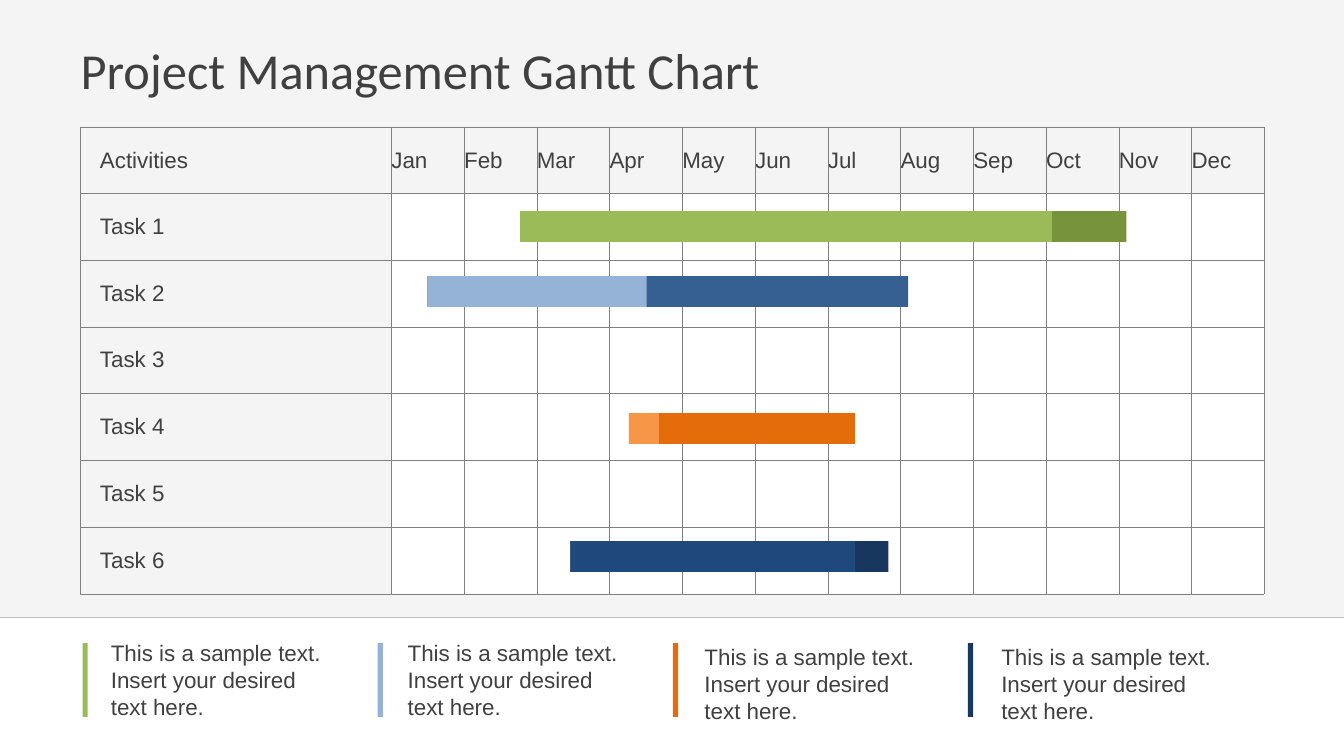
from lxml import etree
from pptx import Presentation, oxml
from pptx import util as u
from pptx.dml import color
from pptx.enum import shapes, text
from pptx.oxml import ns

INK = {
    "text": "404040", "grid": "808080", "rule": "BFBFBF",
    "panel": "D9D9D9", "white": "FFFFFF",
    "lime": "9BBB59", "olive": "77933C",
    "sky": "95B3D7", "blue": "376092",
    "peach": "F79646", "orange": "E46C0A",
    "royal": "1F497D", "navy": "17375E",
}
WIDE, HIGH = 960, 540
MONTHS = "Jan Feb Mar Apr May Jun Jul Aug Sep Oct Nov Dec".split()
TASKS = [f"Task {n}" for n in range(1, 7)]
NOTE = "This is a sample text. Insert your desired text here."


class Board:
    """Draws on one slide in one style; all lengths are in points."""

    def __init__(self, slide):
        self.slide = slide
        self.size, self.face = 16, "Arial"

    def tint(self, name):
        return color.RGBColor.from_string(INK[name])

    def font(self, para, size=None, face=None):
        font = para.font
        font.size, font.name = u.Pt(size or self.size), face or self.face
        font.color.rgb = self.tint("text")

    def inset(self, item, left=0, top=0, right=0, low=0):
        item.margin_left, item.margin_top = u.Pt(left), u.Pt(top)
        item.margin_right, item.margin_bottom = u.Pt(right), u.Pt(low)

    def title(self, words, *box):
        head = self.slide.shapes.title
        head.left, head.top, head.width, head.height = map(u.Pt, box)
        frame = head.text_frame
        frame.text = words
        frame.vertical_anchor = text.MSO_ANCHOR.MIDDLE
        self.inset(frame, 9.6, 4.8, 9.6, 4.8)
        frame.paragraphs[0].alignment = text.PP_ALIGN.LEFT
        self.font(frame.paragraphs[0], 36, "Calibri")

    def rect(self, name, *box, kind=shapes.MSO_SHAPE.RECTANGLE, group=None):
        home = (group or self.slide).shapes
        shape = home.add_shape(kind, *map(u.Pt, box))
        shape.shadow.inherit = False
        shape.fill.solid()
        shape.fill.fore_color.rgb = self.tint(name)
        shape.line.fill.background()
        return shape

    def panel(self, name, alpha, *box):
        shape = self.rect(name, *box)
        tone = shape.element.spPr.find(".//" + ns.qn("a:srgbClr"))
        etree.SubElement(tone, ns.qn("a:alpha"), val=str(alpha * 1000))
        self.slide.shapes.title.element.addprevious(shape.element)

    def rule(self, name, *ends):
        line = self.slide.shapes.add_connector(
            shapes.MSO_CONNECTOR.STRAIGHT, *map(u.Pt, ends))
        line.line.color.rgb = self.tint(name)
        line.line.width = u.Pt(0.25)
        etree.SubElement(line.element.spPr, ns.qn("a:effectLst"))

    def edge(self, cell):
        props = cell._tc.get_or_add_tcPr()
        for at, side in enumerate(("lnL", "lnR", "lnT", "lnB")):
            props.insert(at, oxml.parse_xml(
                f'<a:{side} {ns.nsdecls("a")} w="3175"><a:solidFill>'
                f'<a:srgbClr val="{INK["grid"]}"/></a:solidFill></a:{side}>'))

    def table(self, rows, left, top, wides, highs):
        grid = self.slide.shapes.add_table(
            len(highs), len(wides), u.Pt(left), u.Pt(top),
            u.Pt(sum(wides)), u.Pt(sum(highs))).table
        grid.first_row = grid.horz_banding = False
        for col, wide in zip(grid.columns, wides):
            col.width = u.Pt(wide)
        for y, (row, high) in enumerate(zip(rows, highs)):
            grid.rows[y].height = u.Pt(high)
            for x, words in enumerate(row):
                cell = grid.cell(y, x)
                cell.text = words
                cell.vertical_anchor = text.MSO_ANCHOR.MIDDLE
                self.inset(cell, *((0,) * 4 if x else (14.4, 3.6, 7.2, 3.6)))
                self.font(cell.text_frame.paragraphs[0])
                if x and y:
                    cell.fill.solid()
                    cell.fill.fore_color.rgb = self.tint("white")
                else:
                    cell.fill.background()
                self.edge(cell)

    def bar(self, left, top, full, part, back, front):
        group = self.slide.shapes.add_group_shape()
        for wide, name in ((full, back), (part, front)):
            shape = self.rect(name, left, top, wide, 21.9, group=group,
                              kind=shapes.MSO_SHAPE.ROUNDED_RECTANGLE)
            shape.adjustments[0] = 0

    def note(self, words, *box):
        frame = self.slide.shapes.add_textbox(*map(u.Pt, box)).text_frame
        frame.word_wrap = True
        frame.auto_size = text.MSO_AUTO_SIZE.SHAPE_TO_FIT_TEXT
        self.inset(frame)
        frame.text = words
        self.font(frame.paragraphs[0])


def main():
    deck = Presentation()
    deck.slide_width, deck.slide_height = u.Pt(WIDE), u.Pt(HIGH)
    board = Board(deck.slides.add_slide(deck.slide_layouts[5]))

    # Backdrop and title
    board.panel("panel", 28, 0, 0, WIDE, 440.8)
    board.title("Project Management Gantt Chart", 48, 21.6, 864, 56.2)

    # Calendar grid
    rows = [["Activities"] + MONTHS]
    rows += [[task] + [""] * len(MONTHS) for task in TASKS]
    board.table(rows, 57, 91, [222.6] + [51.97] * len(MONTHS),
                [47.1] + [47.7] * len(TASKS))
    board.rule("rule", 0, 440.8, WIDE, 440.8)

    # Task bars: left, top, full width, front width, back and front colours
    for bar in (
        (305.3, 197.2, 343.4, 156.5, "blue", "sky"),
        (407.5, 386.6, 227, 203.2, "navy", "royal"),
        (449.3, 295.1, 161.3, 21.4, "orange", "peach"),
        (371.5, 150.9, 433, 379.8, "olive", "lime"),
    ):
        board.bar(*bar)

    # Legend: coloured ticks, then notes
    ticks = board.slide.shapes.add_group_shape()
    for n, name in enumerate(("lime", "sky", "orange", "navy")):
        board.rect(name, 59 + 210.8 * n, 459.4, 3.7, 52.7, group=ticks)
    for n, top in enumerate((456.5, 456.5, 459.4, 459.4)):
        board.note(NOTE, 79.2 + 212 * n, top, 159, 58.2)

    deck.save("out.pptx")


if __name__ == "__main__":
    main()
